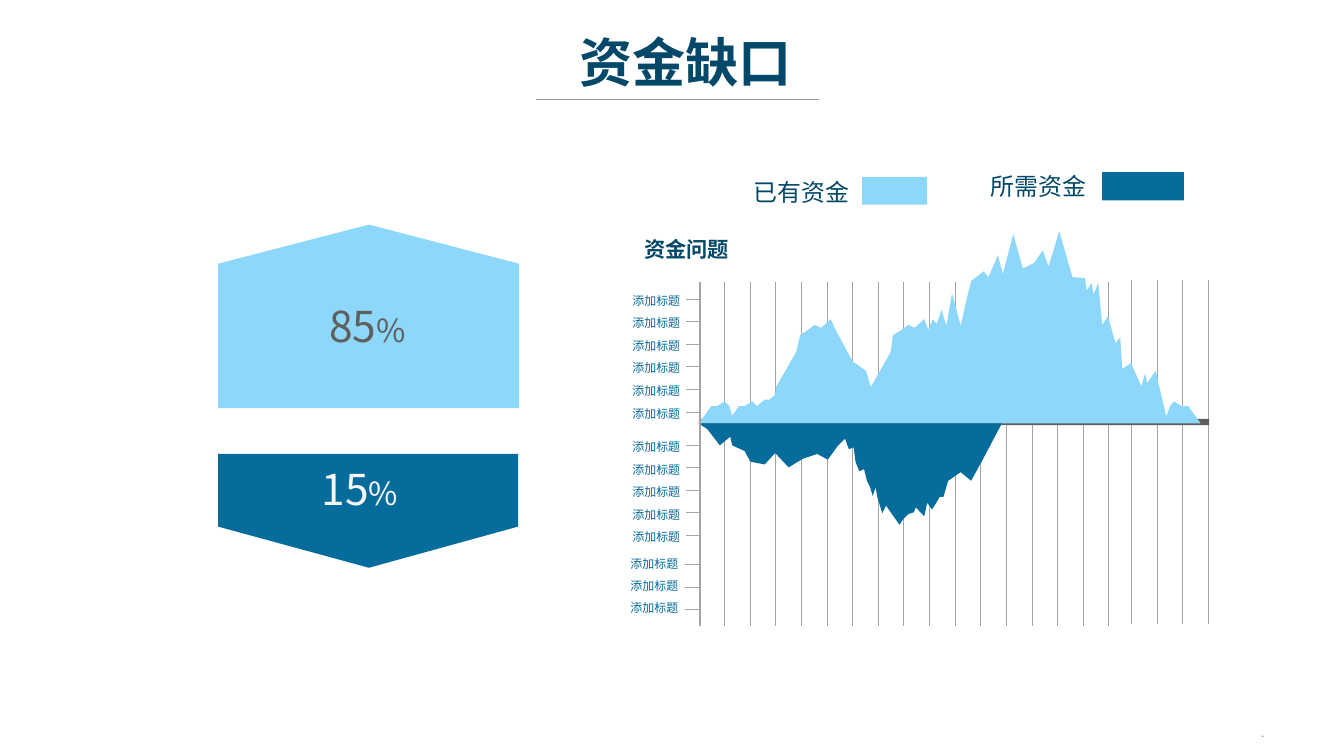
from dataclasses import dataclass

from lxml import etree
from pptx import Presentation
from pptx.dml.color import RGBColor
from pptx.enum.shapes import MSO_CONNECTOR, MSO_SHAPE
from pptx.enum.text import MSO_ANCHOR, MSO_AUTO_SIZE, PP_ALIGN
from pptx.oxml.ns import qn
from pptx.util import Pt

STRAIGHT = MSO_CONNECTOR.STRAIGHT
RECTANGLE = MSO_SHAPE.RECTANGLE
MIDDLE = MSO_ANCHOR.MIDDLE
FIT, FIXED = MSO_AUTO_SIZE.SHAPE_TO_FIT_TEXT, MSO_AUTO_SIZE.NONE
LEFT, CENTER, RIGHT = PP_ALIGN.LEFT, PP_ALIGN.CENTER, PP_ALIGN.RIGHT

CJK = "Noto Sans CJK SC"
COLORS = {
    "sky": "8DD7FA", "ocean": "056C9C", "navy": "034868", "gray": "5F5F5F",
    "grid": "A5A5A5", "rule": "969696", "light": "F8F8F8",
}

AXIS_X, BASE_Y = 527, 319
GRID_HEIGHT = 259.2

AVAILABLE = [
    (526.3, BASE_Y), (535.7, 306), (540, 306), (545.8, 302.4), (549.4, 306),
    (551.5, 313.2), (556.6, 306), (560.9, 306), (566.6, 302.4), (570.2, 306),
    (576, 301), (579.6, 301), (583.9, 297.4), (584.6, 291.6), (590.4, 281.5),
    (599.8, 265), (602.6, 252.7), (609.8, 247.7), (613.4, 244.8), (618.5, 247),
    (625.7, 240.5), (629.3, 248.4), (642.2, 272.2), (652.3, 279.4), (655.9, 291.6),
    (661.7, 281.5), (671, 265), (672.5, 252.7), (680.4, 247.7), (684, 244.8),
    (689, 247), (696.2, 240.5), (699.1, 248.4), (702.7, 240.5), (705.6, 244.1),
    (709.2, 233.3), (712.8, 245.5), (717.1, 221), (723.6, 245.5), (727.9, 226.1),
    (731.5, 211.7), (740.9, 204.5), (744.5, 208.8), (751.7, 192.2), (755.3, 206.6),
    (763.2, 176.4), (770.4, 202.3), (779, 198), (785.5, 188.6), (789.8, 200.9),
    (797.8, 174.2), (807.8, 208.8), (817.2, 209.5), (818.6, 218.9), (822.2, 213.1),
    (823.7, 221.8), (827.3, 213.1), (830.2, 244.8), (834.5, 238.3), (840.2, 258.5),
    (843.8, 254.2), (845.3, 277.9), (851.8, 273.6), (859.7, 290.9), (862.6, 281.5),
    (864, 288.7), (870.5, 279.4), (878.4, 313.9), (881.3, 306), (884.2, 302.4),
    (889.9, 306), (895, 306), (904.3, BASE_Y),
]
REQUIRED = [
    (526.3, BASE_Y), (532.8, 323.3), (542.2, 335.5), (550.1, 329), (551.5, 335.5),
    (560.9, 339.8), (565.2, 347.8), (576, 349.9), (583.9, 341.3), (594, 352.1),
    (604.8, 345.6), (615.6, 342), (623.5, 346.3), (631.4, 335.5), (636.5, 330.5),
    (639.4, 338.4), (643, 337), (644.4, 347.8), (647.3, 355), (650.9, 353.5),
    (653, 362.2), (655.2, 366.5), (657.4, 373.7), (659.5, 367.2), (661, 375.1),
    (664.6, 386.6), (667.4, 380.9), (673.9, 390.2), (677.5, 395.3), (680.4, 391),
    (684, 387.4), (688.3, 385.9), (689.8, 382.3), (696.2, 388.8), (698.4, 378.7),
    (702, 383.8), (704.9, 379.4), (707.8, 374.4), (710.6, 374.4), (714.2, 362.2),
    (723.6, 355.7), (731.5, 362.2), (740.2, 346.3), (754.6, BASE_Y),
]
ROOF = [(164.2, 198.7), (277.9, 169.2), (391, 198.7), (391, 307.4), (164.2, 307.4)]
ARROW = [(164.2, 342), (390.2, 342), (390.2, 396.7), (277.9, 427.7), (164.2, 396.7)]


@dataclass
class Box:
    left: float
    top: float
    width: float
    height: float


@dataclass
class Label:
    text: str
    box: Box
    size: float
    color: str
    align: PP_ALIGN = CENTER
    bold: bool = False
    unit: str = ""
    font: str = CJK


@dataclass
class GridRun:
    first: float
    step: float
    count: int
    top: float


@dataclass
class TickRun:
    count: int
    label_left: float
    label_top: float
    tick_y: float
    axis_x: float
    step: float


GRIDS = [GridRun(545.8, 19.3, 16, 212.4), GridRun(852.5, 19.2, 4, 211)]
TICKS = [
    TickRun(6, 468.7, 217.4, 225.4, AXIS_X, 17),
    TickRun(5, 468.7, 327.6, 335.5, AXIS_X, 16.95),
    TickRun(3, 467.3, 415.4, 425.5, 526.3, 16.8),
]
BARS = [
    (Box(649.4, 133.2, 49, 21), "sky"),
    (Box(830.2, 129.6, 61.6, 21.4), "ocean"),
    (Box(526.3, 315.5, 384.4, 4.8), "gray"),
]
AREAS = [(ROOF, "sky"), (ARROW, "ocean"), (AVAILABLE, "sky"), (REQUIRED, "ocean")]
LABELS = [
    Label("资金缺口", Box(427, 18.7, 176.4, 55.4), 40, "navy", RIGHT, True),
    Label("资金问题", Box(478, 174.2, 79.2, 26.6), 16, "navy", LEFT, True),
    Label("已有资金", Box(560.2, 130.3, 87.1, 28.8), 18, "navy"),
    Label("所需资金", Box(738.7, 126, 87.1, 28.8), 18, "navy"),
    Label("85", Box(228.2, 222.5, 97.2, 46), 32, "gray", unit="%"),
    Label("15", Box(222.5, 344.9, 97.2, 46), 32, "light", unit="%"),
]
FOOTER = Label("*", Box(727.9, 540.7, 227.5, 30.2), 5, "gray", RIGHT, font="Calibri")


def rgb(name: str) -> RGBColor:
    return RGBColor.from_string(COLORS[name])


def paint(s, color: str) -> None:
    s.shadow.inherit = False
    s.fill.solid()
    s.fill.fore_color.rgb = rgb(color)
    s.line.fill.background()


def draw_line(shapes, x1: float, y1: float, x2: float, y2: float,
              color: str = "grid", weight: float = 0.75) -> None:
    s = shapes.add_connector(STRAIGHT, Pt(x1), Pt(y1), Pt(x2), Pt(y2))
    s.line.color.rgb = rgb(color)
    s.line.width = Pt(weight)
    etree.SubElement(s._element.spPr, qn("a:effectLst"))


def draw_area(shapes, points: list, color: str) -> None:
    start, *rest = [(Pt(x), Pt(y)) for x, y in points]
    builder = shapes.build_freeform(*start)
    builder.add_line_segments(rest, close=True)
    paint(builder.convert_to_shape(), color)


def place(box: Box) -> tuple:
    return Pt(box.left), Pt(box.top), Pt(box.width), Pt(box.height)


def draw_label(shapes, label: Label):
    tf = shapes.add_textbox(*place(label.box)).text_frame
    tf.word_wrap = bool(label.unit)
    tf.auto_size = FIT
    tf.text = label.text
    p = tf.paragraphs[0]
    p.alignment = label.align
    if label.unit:
        p.add_run().text = label.unit
    for r, size in zip(p.runs, (label.size, label.size * 0.75)):
        r.font.size = Pt(size)
        r.font.bold = label.bold
        r.font.color.rgb = rgb(label.color)
        r.font.name = label.font
        etree.SubElement(r.font._element, qn("a:ea"), typeface=label.font)
    return tf


def draw_footer(shapes) -> None:
    tf = draw_label(shapes, FOOTER)
    tf.word_wrap = True
    tf.auto_size = FIXED
    tf.vertical_anchor = MIDDLE
    tf.margin_left = tf.margin_right = Pt(2.88)
    tf.margin_top = tf.margin_bottom = Pt(1.44)


def main() -> None:
    prs = Presentation()
    prs.slide_width, prs.slide_height = Pt(1012.3), Pt(569.5)
    shapes = prs.slides.add_slide(prs.slide_layouts[6]).shapes
    draw_footer(shapes)
    for grid in GRIDS:
        for i in range(grid.count):
            x = grid.first + i * grid.step
            draw_line(shapes, x, grid.top, x, grid.top + GRID_HEIGHT)
    for box, color in BARS:
        paint(shapes.add_shape(RECTANGLE, *place(box)), color)
    for points, color in AREAS:
        draw_area(shapes, points, color)
    for label in LABELS:
        draw_label(shapes, label)
    draw_line(shapes, 403.9, 74.9, 617, 74.9, "rule")
    draw_line(shapes, AXIS_X, 212.4, AXIS_X, 212.4 + GRID_HEIGHT, weight=1.5)
    for run in TICKS:
        for i in range(run.count):
            offset = i * run.step
            box = Box(run.label_left, run.label_top + offset, 51.1, 18)
            draw_label(shapes, Label("添加标题", box, 9, "ocean"))
            y = run.tick_y + offset
            draw_line(shapes, run.axis_x, y, run.axis_x - 10, y)
    prs.save("out.pptx")


if __name__ == "__main__":
    main()
